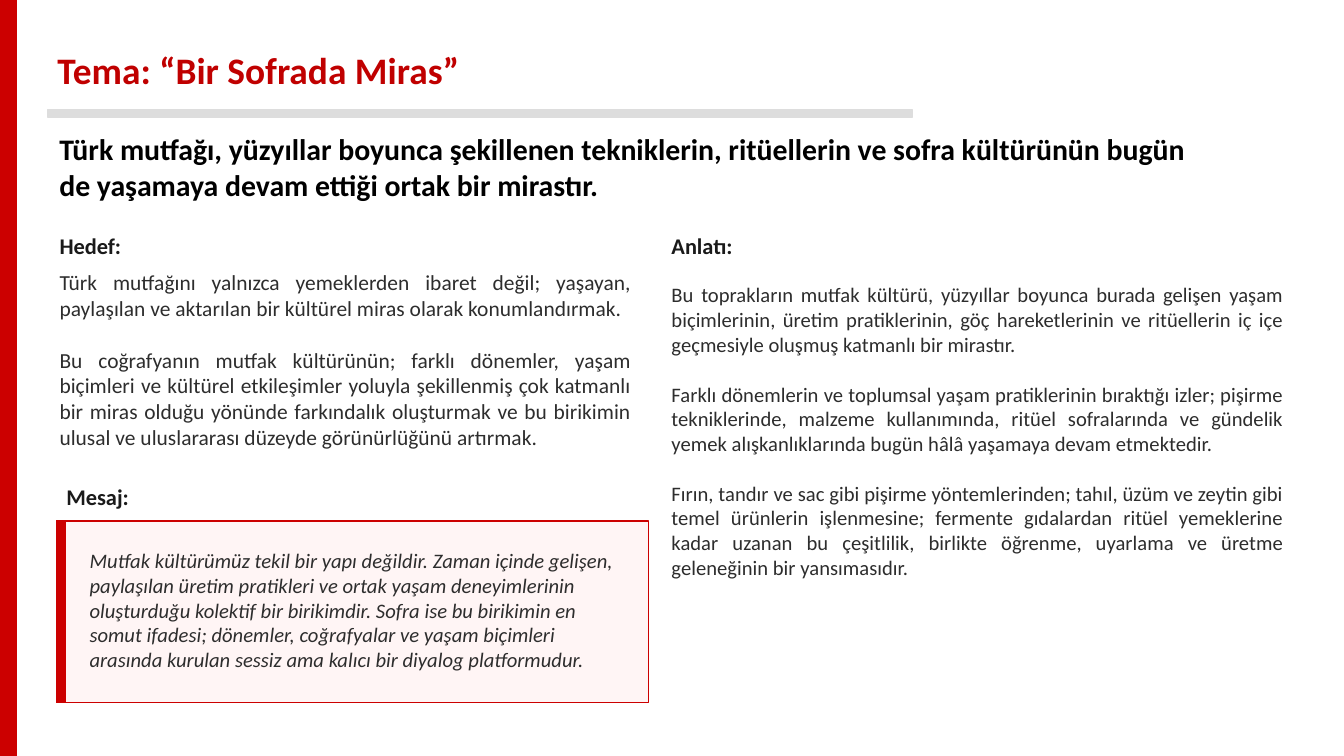
from lxml import etree
from pptx import Presentation, util as u
from pptx.dml.color import RGBColor
from pptx.enum import shapes, text
from pptx.oxml.ns import qn

COLORS = {
    "red": "CC0000",
    "title": "C00000",
    "rule": "DDDDDD",
    "blush": "FFF5F5",
    "statement": "000000",
    "heading": "1A1A1A",
    "body": "2D2D2D",
}
FORMATS = {
    "title": {"size": u.Pt(26.7), "bold": True, "italic": False},
    "statement": {"size": u.Pt(21.3), "bold": True, "italic": False},
    "heading": {"size": u.Pt(16), "bold": True, "italic": False},
    "goal": {"size": u.Pt(15.3), "bold": False, "italic": False},
    "story": {"size": u.Pt(14.7), "bold": False, "italic": False},
    "message": {"size": u.Pt(14.7), "bold": False, "italic": True},
}
LINE_HEIGHT = 1.22
HEADING_HEIGHT = 0.43

TITLE = "Tema: “Bir Sofrada Miras”"
STATEMENT = (
    "Türk mutfağı, yüzyıllar boyunca şekillenen tekniklerin, ritüellerin ve sofra "
    "kültürünün bugün de yaşamaya devam ettiği ortak bir mirastır."
)
GOAL = [
    "Türk mutfağını yalnızca yemeklerden ibaret değil; yaşayan, paylaşılan ve "
    "aktarılan bir kültürel miras olarak konumlandırmak.",
    "Bu coğrafyanın mutfak kültürünün; farklı dönemler, yaşam biçimleri ve kültürel "
    "etkileşimler yoluyla şekillenmiş çok katmanlı bir miras olduğu yönünde "
    "farkındalık oluşturmak ve bu birikimin ulusal ve uluslararası düzeyde "
    "görünürlüğünü artırmak.",
]
STORY = [
    "Bu toprakların mutfak kültürü, yüzyıllar boyunca burada gelişen yaşam "
    "biçimlerinin, üretim pratiklerinin, göç hareketlerinin ve ritüellerin iç içe "
    "geçmesiyle oluşmuş katmanlı bir mirastır.",
    "Farklı dönemlerin ve toplumsal yaşam pratiklerinin bıraktığı izler; pişirme "
    "tekniklerinde, malzeme kullanımında, ritüel sofralarında ve gündelik yemek "
    "alışkanlıklarında bugün hâlâ yaşamaya devam etmektedir.",
    "Fırın, tandır ve sac gibi pişirme yöntemlerinden; tahıl, üzüm ve zeytin gibi "
    "temel ürünlerin işlenmesine; fermente gıdalardan ritüel yemeklerine kadar uzanan "
    "bu çeşitlilik, birlikte öğrenme, uyarlama ve üretme geleneğinin bir yansımasıdır.",
]
MESSAGE = (
    "Mutfak kültürümüz tekil bir yapı değildir. Zaman içinde gelişen, paylaşılan "
    "üretim pratikleri ve ortak yaşam deneyimlerinin oluşturduğu kolektif bir "
    "birikimdir. Sofra ise bu birikimin en somut ifadesi; dönemler, coğrafyalar ve "
    "yaşam biçimleri arasında kurulan sessiz ama kalıcı bir diyalog platformudur."
)


def add_box(slide, box):
    return slide.shapes.add_textbox(*map(u.Inches, box))


def add_bar(slide, box, fill, line):
    bar = slide.shapes.add_shape(shapes.MSO_SHAPE.RECTANGLE, *map(u.Inches, box))
    bar.shadow.inherit = False
    bar.fill.solid()
    bar.fill.fore_color.rgb = RGBColor.from_string(COLORS[fill])
    bar.line.color.rgb = RGBColor.from_string(COLORS[line])
    bar.line.width = u.Pt(1)


def write(holder, box, wording, style, color,
          align=text.PP_ALIGN.LEFT, anchor=text.MSO_ANCHOR.MIDDLE, bottom=0.05):
    for side, length in zip(("left", "top", "width", "height"), box):
        setattr(holder, side, u.Inches(length))
    frame = holder.text_frame
    frame_format = {
        "word_wrap": True,
        "auto_size": text.MSO_AUTO_SIZE.NONE,
        "vertical_anchor": anchor,
        "margin_bottom": u.Inches(bottom),
    }
    for name, value in frame_format.items():
        setattr(frame, name, value)
    gap = u.Pt(round(FORMATS[style]["size"].pt * LINE_HEIGHT, 1))
    for number, sentence in enumerate(wording):
        paragraph = frame.add_paragraph() if number else frame.paragraphs[0]
        properties = paragraph._p.get_or_add_pPr()
        properties.set("marL", "0")
        properties.set("indent", "0")
        etree.SubElement(properties, qn("a:buNone"))
        paragraph.alignment = align
        paragraph.space_before = gap if number else u.Pt(0)
        run = paragraph.add_run()
        run.text = sentence
        run.font.name = "Calibri"
        run.font.color.rgb = RGBColor.from_string(COLORS[color])
        for name, value in FORMATS[style].items():
            setattr(run.font, name, value)


def add_header(slide, box):
    left, top, width, height = box
    write(slide.shapes.title, (left, top, width, 0.64), [TITLE], "title", "title")
    add_bar(slide, (left, top + 0.72, 8.58, 0.07), "rule", "rule")
    statement_box = (left + 0.02, top + 0.88, 11.46, height - 0.88)
    write(add_box(slide, statement_box), statement_box, [STATEMENT],
          "statement", "statement", anchor=text.MSO_ANCHOR.TOP)


def add_column(heading, body, box, label, wording, style, body_offset, bottom=0.05):
    left, top, width, height = box
    write(heading, (left, top, width, HEADING_HEIGHT), [label], "heading", "heading")
    write(body, (left, top + body_offset, width, height - body_offset), wording,
          style, "body", align=text.PP_ALIGN.JUSTIFY, bottom=bottom)


def add_message(slide, box):
    left, top, width, height = box
    heading_box = (left, top, width, HEADING_HEIGHT)
    write(add_box(slide, heading_box), heading_box, ["Mesaj:"], "heading", "heading")
    card_top, card_height = top + 0.46, height - 0.46
    add_bar(slide, (left, card_top, width, card_height), "blush", "red")
    add_bar(slide, (left, card_top, 0.09, card_height), "red", "red")
    message_box = (left + 0.23, card_top + 0.08, width - 0.4, card_height - 0.2)
    write(add_box(slide, message_box), message_box, [MESSAGE], "message", "body")


def main():
    deck = Presentation()
    deck.slide_width, deck.slide_height = u.Inches(13.33), u.Inches(7.5)
    slide = deck.slides.add_slide(deck.slide_layouts.get_by_name("Comparison"))
    goal_heading, goal, story_heading, story = list(slide.placeholders)[1:5]
    add_bar(slide, (0, 0, 0.16, 7.5), "red", "red")
    add_header(slide, (0.47, 0.37, 12.4, 2.06))
    add_column(goal_heading, goal, (0.49, 2.22, 5.87, 2.18),
               "Hedef:", GOAL, "goal", body_offset=0.51)
    add_message(slide, (0.56, 4.71, 5.87, 2.26))
    add_column(story_heading, story, (6.56, 2.22, 6.27, 4.11),
               "Anlatı:", STORY, "story", body_offset=0.25, bottom=0.3)
    deck.save("out.pptx")


if __name__ == "__main__":
    main()
